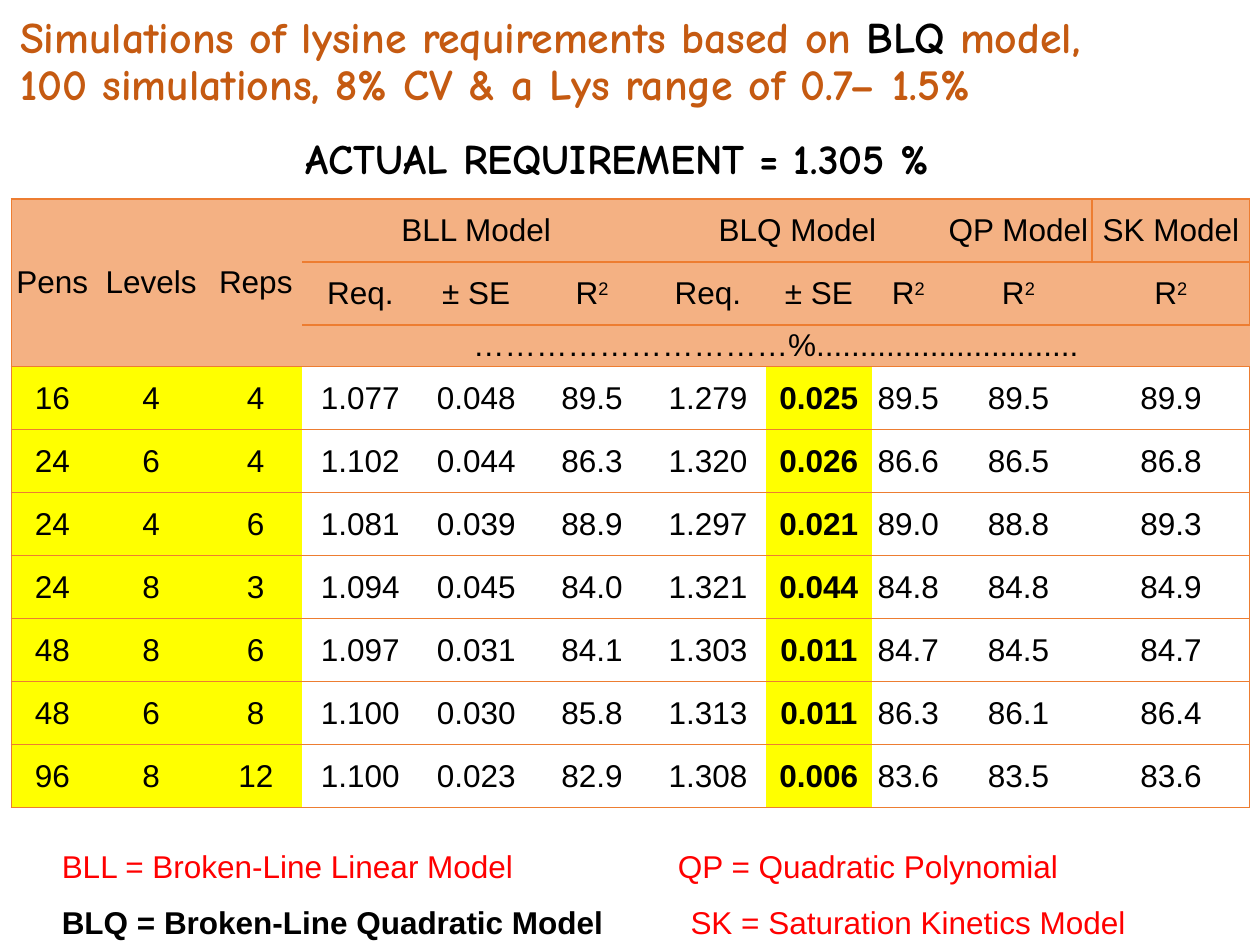
from pptx import Presentation
from pptx import util as u
from pptx.dml import color
from pptx.enum import text
from pptx.oxml import ns
from lxml import etree

ORANGE, BLACK, RED = "C55A11", "000000", "FF0000"
HEADER, YELLOW, WHITE, RULE = "F4B183", "FFFF00", "FFFFFF", "ED7D31"
HEADING_FONT, BODY_FONT = "Comic Neue", "Arial"

COLUMN_WIDTHS = [0.65, 0.92, 0.74, 0.92, 0.92, 0.92, 0.92, 0.84, 0.58, 1.17, 1.25]
HEADER_HEIGHTS = [0.5, 0.5, 0.33]
ROW_HEIGHT = 0.5
DESIGN_COLUMNS = 3
BLQ_SE_COLUMN = 7
QP_COLUMN = 9
MERGES = [(0, 0, 2, 0), (0, 1, 2, 1), (0, 2, 2, 2),
          (0, 3, 0, 5), (0, 6, 0, 8), (2, 3, 2, 10)]
HEADER_LABELS = {
    (0, 0): "Pens", (0, 1): "Levels", (0, 2): "Reps",
    (0, 3): "BLL Model", (0, 6): "BLQ Model",
    (0, 9): "QP Model", (0, 10): "SK Model",
    (1, 3): "Req.", (1, 4): "± SE", (1, 5): "R²",
    (1, 6): "Req.", (1, 7): "± SE", (1, 8): "R²",
    (1, 9): "R²", (1, 10): "R²",
    (2, 3): "…………………………%..............................",
}
SIMULATIONS = [
    "16 4 4 1.077 0.048 89.5 1.279 0.025 89.5 89.5 89.9",
    "24 6 4 1.102 0.044 86.3 1.320 0.026 86.6 86.5 86.8",
    "24 4 6 1.081 0.039 88.9 1.297 0.021 89.0 88.8 89.3",
    "24 8 3 1.094 0.045 84.0 1.321 0.044 84.8 84.8 84.9",
    "48 8 6 1.097 0.031 84.1 1.303 0.011 84.7 84.5 84.7",
    "48 6 8 1.100 0.030 85.8 1.313 0.011 86.3 86.1 86.4",
    "96 8 12 1.100 0.023 82.9 1.308 0.006 83.6 83.5 83.6",
]


def rgb(hex_code):
    return color.RGBColor.from_string(hex_code)


def write(paragraph, words, size=18, font=BODY_FONT, hex_code=BLACK, bold=False,
          align=text.PP_ALIGN.LEFT, spacing=None, superscript=False):
    paragraph.alignment = align
    if spacing:
        paragraph.line_spacing = spacing
    for index, line in enumerate(words.split("\n")):
        if index:
            paragraph.add_line_break()
        run = paragraph.add_run()
        run.text = line
        run.font.size = u.Pt(size)
        run.font.name = font
        run.font.bold = bold
        run.font.color.rgb = rgb(hex_code)
        if superscript:
            run.font._element.set("baseline", "30000")


def place_title(title, left, top, width, height):
    title.left, title.top = u.Inches(left), u.Inches(top)
    title.width, title.height = u.Inches(width), u.Inches(height)
    frame = title.text_frame
    frame.auto_size = text.MSO_AUTO_SIZE.NONE
    frame.vertical_anchor = text.MSO_ANCHOR.MIDDLE
    for words, hex_code in [
        ("Simulations of lysine requirements based on ", ORANGE),
        ("BLQ", BLACK),
        (" model,\n100 simulations, 8% CV & a Lys range of 0.7– 1.5%", ORANGE),
    ]:
        write(frame.paragraphs[0], words, size=25, font=HEADING_FONT,
              hex_code=hex_code, bold=True, spacing=0.9)


def add_borders(cell, visible_sides):
    properties = cell._tc.get_or_add_tcPr()
    for side in "LRTB":
        line = etree.SubElement(properties, ns.qn(f"a:ln{side}"), w=str(u.Pt(1)))
        if side in visible_sides:
            fill = etree.SubElement(line, ns.qn("a:solidFill"))
            etree.SubElement(fill, ns.qn("a:srgbClr"), val=RULE)
        else:
            etree.SubElement(line, ns.qn("a:noFill"))


def visible_sides(row, column):
    last_column = len(COLUMN_WIDTHS) - 1
    in_design_header = column < DESIGN_COLUMNS
    rules = {
        "L": column == 0 or (row, column) == (0, QP_COLUMN + 1),
        "R": column == last_column or (row, column) == (0, QP_COLUMN),
        "T": not (in_design_header and row in (1, 2)),
        "B": not (in_design_header and row in (0, 1)),
    }
    return [side for side, visible in rules.items() if visible]


def format_cell(cell, row, column, words):
    header = row < len(HEADER_HEIGHTS)
    highlighted = column < DESIGN_COLUMNS or column == BLQ_SE_COLUMN
    cell.margin_left = cell.margin_right = cell.margin_top = cell.margin_bottom = 0
    cell.vertical_anchor = text.MSO_ANCHOR.MIDDLE
    add_borders(cell, visible_sides(row, column))
    cell.fill.solid()
    cell.fill.fore_color.rgb = rgb(
        HEADER if header else YELLOW if highlighted else WHITE)
    paragraph = cell.text_frame.paragraphs[0]
    base = words.removesuffix("²")
    if base:
        write(paragraph, base, align=text.PP_ALIGN.CENTER,
              bold=not header and column == BLQ_SE_COLUMN)
    if base != words:
        write(paragraph, "2", align=text.PP_ALIGN.CENTER, superscript=True)


def add_results_table(slide, left, top, width, height):
    heights = HEADER_HEIGHTS + [ROW_HEIGHT] * len(SIMULATIONS)
    table = slide.shapes.add_table(
        len(heights), len(COLUMN_WIDTHS), u.Inches(left), u.Inches(top),
        u.Inches(width), u.Inches(height)).table
    for column, column_width in zip(table.columns, COLUMN_WIDTHS):
        column.width = u.Inches(column_width)
    for row, row_height in zip(table.rows, heights):
        row.height = u.Inches(row_height)
    labels = dict(HEADER_LABELS)
    for row, values in enumerate(SIMULATIONS, len(HEADER_HEIGHTS)):
        for column, value in enumerate(values.split()):
            labels[row, column] = value
    for first_row, first_column, last_row, last_column in MERGES:
        table.cell(first_row, first_column).merge(table.cell(last_row, last_column))
    for row in range(len(heights)):
        for column in range(len(COLUMN_WIDTHS)):
            format_cell(table.cell(row, column), row, column,
                        labels.get((row, column), ""))


def add_legend(slide, left, top, width, height):
    legend = slide.shapes.add_textbox(
        u.Inches(left), u.Inches(top), u.Inches(width), u.Inches(height))
    frame = legend.text_frame
    frame.word_wrap = True
    frame.margin_left = u.Inches(0.6)
    entries = [
        ("BLL = Broken-Line Linear Model", RED, False,
         "QP = Quadratic Polynomial", 4.89),
        ("BLQ = Broken-Line Quadratic Model", BLACK, True,
         "SK = Saturation Kinetics Model", 4.99),
    ]
    for index, (first, hex_code, bold, second, tab) in enumerate(entries):
        paragraph = frame.add_paragraph() if index else frame.paragraphs[0]
        write(paragraph, first + "\t", hex_code=hex_code, bold=bold, spacing=1.5)
        write(paragraph, second, hex_code=RED, spacing=1.5)
        tabs = etree.SubElement(paragraph._p.get_or_add_pPr(), ns.qn("a:tabLst"))
        etree.SubElement(tabs, ns.qn("a:tab"), pos=str(u.Inches(tab)), algn="l")


def add_requirement(slide, left, top, width, height):
    requirement = slide.shapes.add_textbox(
        u.Inches(left), u.Inches(top), u.Inches(width), u.Inches(height))
    requirement.text_frame.word_wrap = True
    write(requirement.text_frame.paragraphs[0], "ACTUAL REQUIREMENT = 1.305 %",
          size=24, font=HEADING_FONT, bold=True)


def main():
    deck = Presentation()
    deck.slide_width, deck.slide_height = u.Inches(10), u.Inches(7.5)
    slide = deck.slides.add_slide(deck.slide_layouts.get_by_name("Title Only"))
    place_title(slide.shapes.title, 0.06, 0, 9.88, 1)
    add_results_table(slide, 0.09, 1.58, 9.83, 4.83)
    add_legend(slide, -0.11, 6.52, 10.08, 1.01)
    add_requirement(slide, 2.33, 1, 6.19, 0.5)
    deck.save("out.pptx")


if __name__ == "__main__":
    main()
